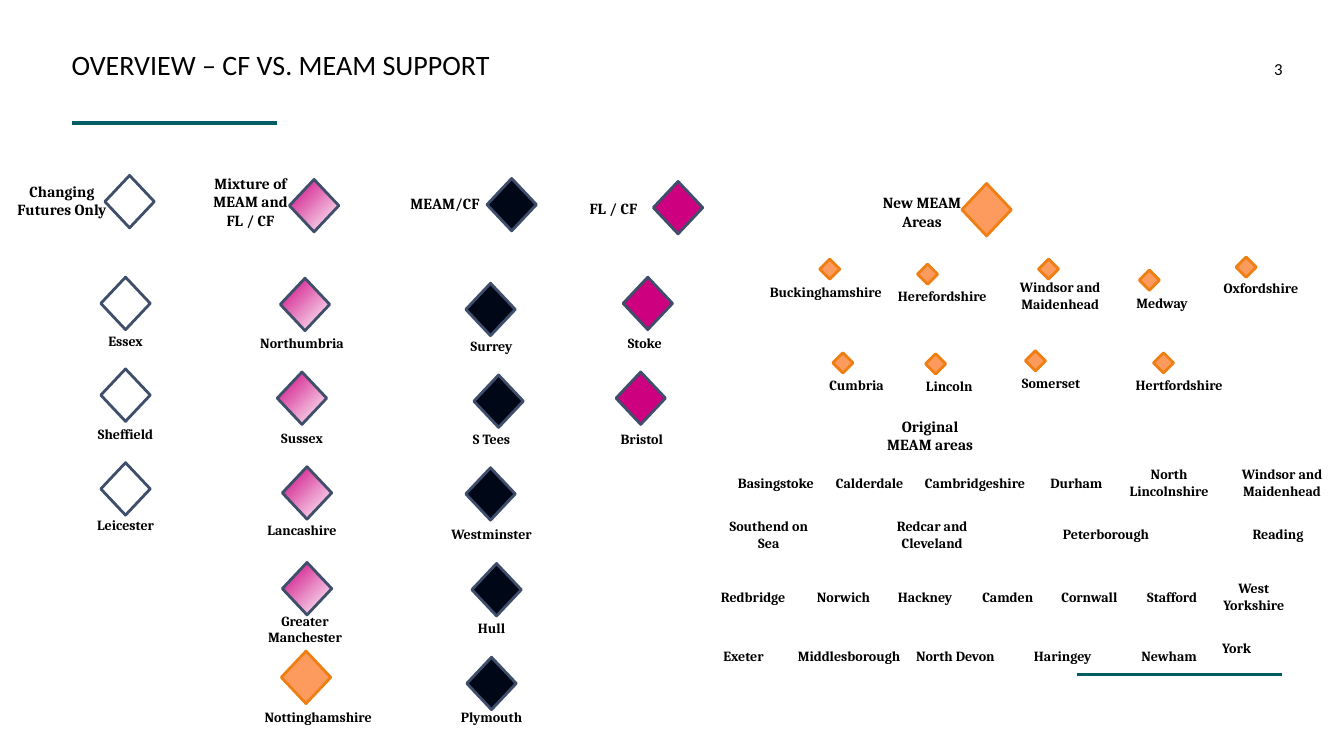
from lxml import etree
from pptx import Presentation
from pptx.dml.color import RGBColor
from pptx.enum.shapes import MSO_CONNECTOR, MSO_SHAPE
from pptx.enum.text import MSO_ANCHOR, PP_ALIGN
from pptx.oxml.ns import qn
from pptx.util import Inches, Pt

NAVY, PINK, WHITE, ORANGE = "000818", "CD007F", "FFFFFF", "FD9B5E"
SLATE, DARK_ORANGE, TEAL, BLACK = "3F4E6B", "F07F13", "005D64", "000000"
MIXED = "mixed"
LARGE, SMALL = (0.49, 0.52), (0.2, 0.2)
LABEL_W, LABEL_H = 1.11, 0.2

# Legend: name, fill, diamond x, y, label x, y
LEGEND = [
    ("Changing Futures Only", WHITE, 1.04, 1.74, 0.06, 1.89),
    ("Mixture of MEAM and FL / CF", MIXED, 2.87, 1.78, 1.93, 1.9),
    ("MEAM/CF", NAVY, 4.83, 1.77, 3.86, 1.92),
    ("FL / CF", PINK, 6.48, 1.8, 5.53, 1.97),
    ("New MEAM Areas", ORANGE, 9.54, 1.82, 8.59, 2),
]

# Areas by type of support: name, diamond x, y, label x, y
SUPPORTED = {
    WHITE: [
        ("Essex", 1, 2.75, 0.69, 3.28),
        ("Sheffield", 1, 3.66, 0.69, 4.21),
        ("Leicester", 1, 4.59, 0.69, 5.11),
    ],
    MIXED: [
        ("Northumbria", 2.78, 2.76, 2.44, 3.3),
        ("Sussex", 2.75, 3.69, 2.44, 4.24),
        ("Lancashire", 2.8, 4.63, 2.44, 5.16),
        ("Greater Manchester", 2.8, 5.58, 2.47, 6.14),
    ],
    NAVY: [
        ("Surrey", 4.62, 2.81, 4.32, 3.33),
        ("S Tees", 4.7, 3.72, 4.32, 4.25),
        ("Westminster", 4.62, 4.64, 4.32, 5.2),
        ("Hull", 4.68, 5.59, 4.32, 6.13),
        ("Plymouth", 4.63, 6.52, 4.32, 7.01),
    ],
    PINK: [
        ("Stoke", 6.18, 2.75, 5.84, 3.3),
        ("Bristol", 6.11, 3.69, 5.81, 4.25),
    ],
}

# New areas: name, diamond x, y, label x, y, label width
NEW_AREAS = [
    ("Buckinghamshire", 8.13, 2.57, 7.48, 2.8, 1.42),
    ("Herefordshire", 9.1, 2.62, 8.79, 2.84, LABEL_W),
    ("Windsor and Maidenhead", 10.3, 2.57, 9.96, 2.83, LABEL_W),
    ("Medway", 11.3, 2.68, 10.97, 2.91, LABEL_W),
    ("Oxfordshire", 12.26, 2.55, 11.95, 2.76, LABEL_W),
    ("Cumbria", 8.26, 3.5, 7.94, 3.72, LABEL_W),
    ("Lincoln", 9.18, 3.51, 8.86, 3.73, LABEL_W),
    ("Somerset", 10.17, 3.48, 9.87, 3.7, LABEL_W),
    ("Hertfordshire", 11.44, 3.5, 11.14, 3.72, LABEL_W),
]

# Original areas by row: y, then name, x, width
ORIGINAL_AREAS = {
    4.69: [("Basingstoke", 7.14, LABEL_W), ("Calderdale", 8.07, LABEL_W),
           ("Cambridgeshire", 9.02, 1.3), ("Durham", 10.12, LABEL_W),
           ("North Lincolnshire", 11.04, LABEL_W),
           ("Windsor and Maidenhead", 12.16, LABEL_W)],
    5.2: [("Southend on Sea", 7.07, LABEL_W),
          ("Redcar and Cleveland", 8.69, LABEL_W),
          ("Peterborough", 10.32, 1.3), ("Reading", 12.12, LABEL_W)],
    5.82: [("Redbridge", 6.84, 1.26), ("Norwich", 7.81, LABEL_W),
           ("Hackney", 8.62, LABEL_W), ("Camden", 9.44, LABEL_W),
           ("Cornwall", 10.25, LABEL_W), ("Stafford", 11.07, LABEL_W),
           ("West Yorkshire", 11.88, LABEL_W)],
    6.41: [("Exeter", 6.82, LABEL_W), ("Middlesborough", 7.79, 1.26),
           ("North Devon", 8.92, LABEL_W), ("Haringey", 9.89, 1.3),
           ("Newham", 11.04, LABEL_W)],
}


def rgb(value):
    return RGBColor.from_string(value)


def format_text(tf, size, font, align, bold=False):
    tf.word_wrap = True
    p = tf.paragraphs[0]
    p.alignment = align
    for r in p.runs:
        r.font.size = Pt(size)
        r.font.name = font
        r.font.bold = bold
        r.font.color.rgb = rgb(BLACK)


def clear_margins(tf):
    tf.margin_left = tf.margin_right = tf.margin_top = tf.margin_bottom = 0
    tf.vertical_anchor = MSO_ANCHOR.TOP


def add_label(shapes, text, x, y, w=LABEL_W, h=LABEL_H, size=10):
    box = shapes.add_textbox(Inches(x), Inches(y), Inches(w), Inches(h))
    tf = box.text_frame
    tf.text = text
    tf.vertical_anchor = MSO_ANCHOR.MIDDLE
    format_text(tf, size, "Cambria", PP_ALIGN.CENTER, bold=True)


def fill_mixed(sp):
    """Radial fade from white at the lower right corner to pink."""
    sp.fill.gradient()
    for stop, color in zip(sp.fill.gradient_stops, (WHITE, PINK)):
        stop.color.rgb = rgb(color)
    grad = sp.element.spPr.find(qn("a:gradFill"))
    grad.remove(grad.find(qn("a:lin")))
    radial = etree.SubElement(grad, qn("a:path"), path="circle")
    etree.SubElement(radial, qn("a:fillToRect"), l="100000", t="100000")


def add_diamond(shapes, x, y, fill, size=LARGE):
    w, h = size
    sp = shapes.add_shape(MSO_SHAPE.DIAMOND, Inches(x), Inches(y), Inches(w), Inches(h))
    sp.shadow.inherit = False
    if fill == MIXED:
        fill_mixed(sp)
    else:
        sp.fill.solid()
        sp.fill.fore_color.rgb = rgb(fill)
    sp.line.color.rgb = rgb(DARK_ORANGE if fill == ORANGE else SLATE)
    sp.line.width = Pt(2)


def add_rule(s, x, y, length=2.04):
    line = s.shapes.add_connector(MSO_CONNECTOR.STRAIGHT, Inches(x), Inches(y),
                                  Inches(x + length), Inches(y))
    line.line.color.rgb = rgb(TEAL)
    line.line.width = Pt(2.25)
    etree.SubElement(line.element.spPr, qn("a:effectLst"))


def add_heading(s):
    title = s.shapes.title
    title.left, title.top = Inches(0.71), Inches(0.47)
    title.width, title.height = Inches(12.01), Inches(0.71)
    title.text_frame.text = "OVERVIEW – CF VS. MEAM SUPPORT"
    clear_margins(title.text_frame)
    format_text(title.text_frame, 20, "Calibri", PP_ALIGN.LEFT)

    number = s.shapes.add_textbox(Inches(12.34), Inches(0.58), Inches(0.38), Inches(0.4))
    number.text_frame.text = "3"
    clear_margins(number.text_frame)
    format_text(number.text_frame, 12, "Calibri", PP_ALIGN.RIGHT)


def main():
    prs = Presentation()
    prs.slide_width, prs.slide_height = Inches(13.33), Inches(7.5)
    s = prs.slides.add_slide(prs.slide_layouts[5])

    # Title, page number and teal rules
    add_rule(s, 0.71, 1.22)
    add_rule(s, 10.68, 6.69)
    add_heading(s)

    # Areas in columns, each diamond grouped with its name
    for fill, areas in SUPPORTED.items():
        for name, x, y, label_x, label_y in areas:
            shapes = s.shapes.add_group_shape().shapes
            add_diamond(shapes, x, y, fill)
            add_label(shapes, name, label_x, label_y)

    # Legend row
    for name, fill, x, y, label_x, label_y in LEGEND:
        add_diamond(s.shapes, x, y, fill)
        add_label(s.shapes, name, label_x, label_y, size=11)

    # New areas
    add_diamond(s.shapes, 2.79, 6.46, ORANGE)
    add_label(s.shapes, "Nottinghamshire", 2.45, 7.01, w=1.41)
    for name, x, y, label_x, label_y, w in NEW_AREAS:
        add_diamond(s.shapes, x, y, ORANGE, SMALL)
        add_label(s.shapes, name, label_x, label_y, w)

    # Original areas
    add_label(s.shapes, "Original MEAM areas", 8.67, 4.22, size=11)
    for y, areas in ORIGINAL_AREAS.items():
        for name, x, w in areas:
            add_label(s.shapes, name, x, y, w)
    add_label(s.shapes, "York", 12.01, 6.26, w=0.51, h=0.34)

    prs.save("out.pptx")


if __name__ == "__main__":
    main()
